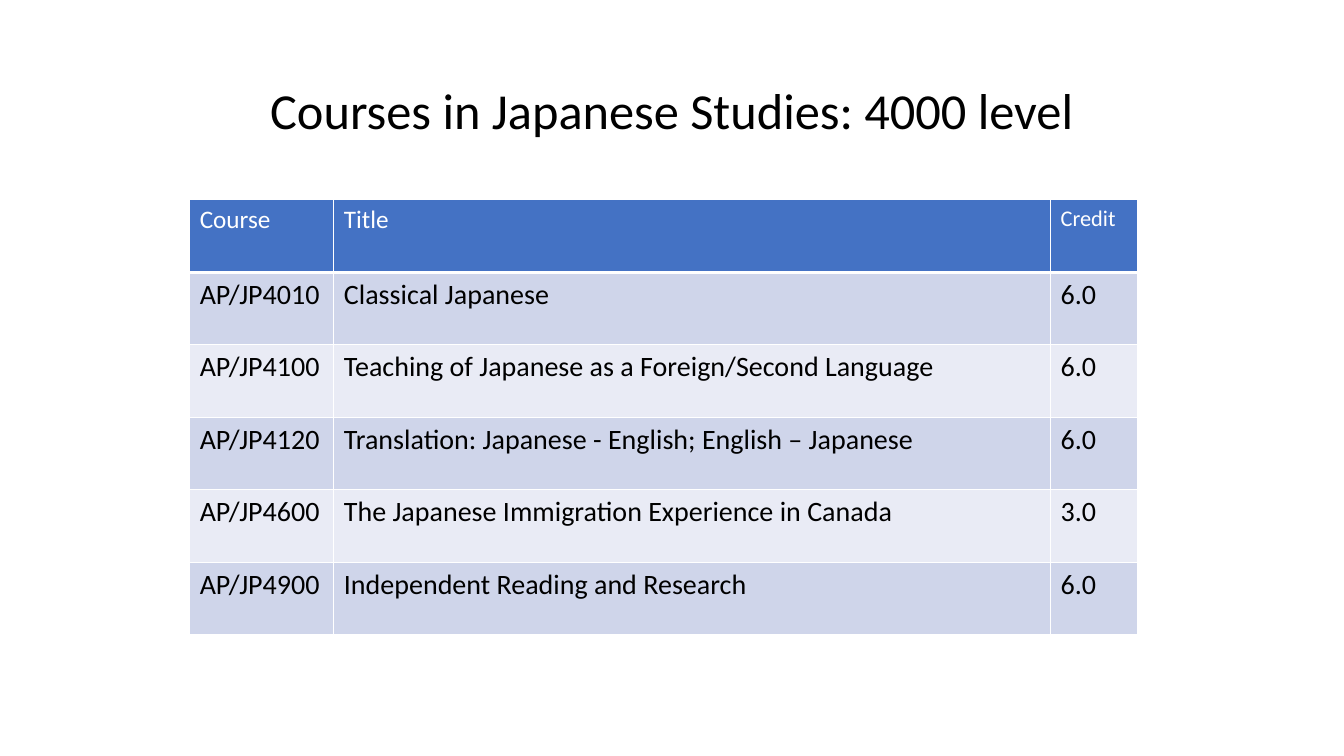
import pptx
import pptx.dml.color
import pptx.enum.text
import pptx.util
from lxml import etree

Pt = pptx.util.Pt
RGBColor = pptx.dml.color.RGBColor
PP_ALIGN = pptx.enum.text.PP_ALIGN
MSO_ANCHOR = pptx.enum.text.MSO_ANCHOR

BLACK = RGBColor(0x00, 0x00, 0x00)
WHITE = RGBColor(0xFF, 0xFF, 0xFF)
BLUE = RGBColor(0x44, 0x72, 0xC4)
BANDS = [RGBColor(0xE9, 0xEB, 0xF5), RGBColor(0xCF, 0xD5, 0xEA)]
A = "{http://schemas.openxmlformats.org/drawingml/2006/main}"

COURSES = [
    ("Course", "Title", "Credit"),
    ("AP/JP4010", "Classical Japanese", "6.0"),
    ("AP/JP4100", "Teaching of Japanese as a Foreign/Second Language", "6.0"),
    ("AP/JP4120", "Translation: Japanese - English; English – Japanese", "6.0"),
    ("AP/JP4600", "The Japanese Immigration Experience in Canada", "3.0"),
    ("AP/JP4900", "Independent Reading and Research", "6.0"),
]


class Deck:
    font = "Calibri"

    def __init__(self, width, height):
        self.prs = pptx.Presentation()
        self.prs.slide_width, self.prs.slide_height = Pt(width), Pt(height)
        self.s = self.prs.slides.add_slide(self.prs.slide_layouts[5])

    def add_text(self, tf, text, size, color):
        p = tf.paragraphs[0]
        r = p.add_run()
        r.text = text
        style = {"name": self.font, "size": Pt(size), "bold": False}
        for key, value in style.items():
            setattr(r.font, key, value)
        r.font.color.rgb = color
        return p

    def title(self, text, left, top, width, height, size):
        sp = self.s.shapes.title
        box = {"left": left, "top": top, "width": width, "height": height}
        for key, value in box.items():
            setattr(sp, key, Pt(value))
        sp.text_frame.vertical_anchor = MSO_ANCHOR.MIDDLE
        p = self.add_text(sp.text_frame, text, size, BLACK)
        for key, value in {"alignment": PP_ALIGN.CENTER, "line_spacing": 0.9}.items():
            setattr(p, key, value)

    def borders(self, cell, bottom):
        tcPr = cell._tc.get_or_add_tcPr()
        for side, width in {"L": 1, "R": 1, "T": 1, "B": bottom}.items():
            ln = etree.SubElement(tcPr, f"{A}ln{side}", w=str(Pt(width)))
            fill = etree.SubElement(ln, f"{A}solidFill")
            etree.SubElement(fill, f"{A}srgbClr", val=str(WHITE))

    def table(self, rows, left, top, widths, row_height):
        sp = self.s.shapes.add_table(
            len(rows), len(widths), Pt(left), Pt(top),
            Pt(sum(widths)), Pt(row_height * len(rows)))
        table = sp.table
        for column, width in zip(table.columns, widths):
            column.width = Pt(width)
        for i, row in enumerate(rows):
            table.rows[i].height = Pt(row_height)
            for j, text in enumerate(row):
                cell = table.cell(i, j)
                header = i == 0
                self.borders(cell, 3 if header else 1)
                cell.fill.solid()
                cell.fill.fore_color.rgb = BLUE if header else BANDS[i % 2]
                size = (16 if text == "Credit" else 18) if header else 20
                self.add_text(cell.text_frame, text, size, WHITE if header else BLACK)


def main():
    deck = Deck(960, 540)
    deck.title("Courses in Japanese Studies: 4000 level", 66, 28.75, 828, 104.4, 36)
    deck.table(COURSES, 135.5, 142.75, [103, 512, 62], 51.8)
    deck.prs.save("out.pptx")


if __name__ == "__main__":
    main()
